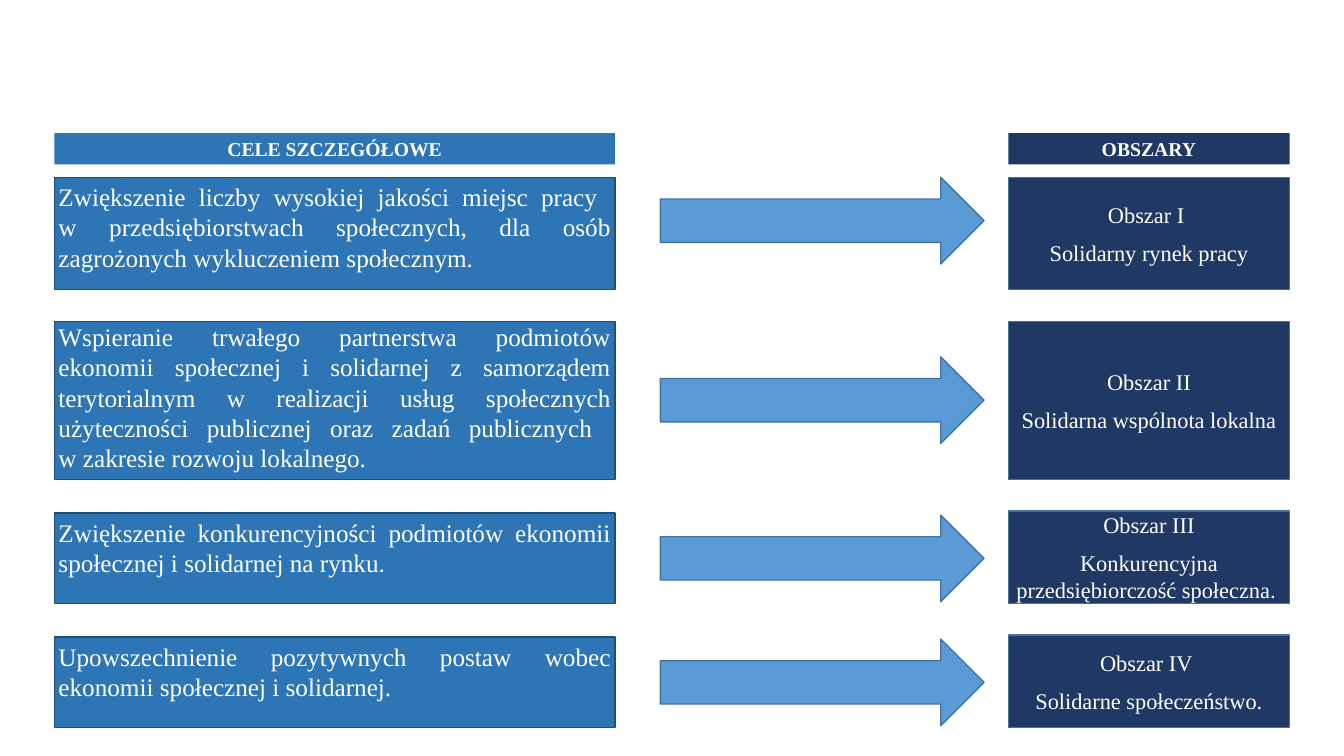
from pptx import Presentation
from pptx.dml.color import RGBColor as Rgb
from pptx.enum.shapes import MSO_SHAPE as Preset
from pptx.enum.text import MSO_ANCHOR as Anchor, PP_ALIGN as Align
from pptx.util import Inches, Pt

THEME = {
    "font": "Times New Roman",
    "white": Rgb.from_string("FFFFFF"),
    "goal": Rgb.from_string("2E75B6"),
    "goal_edge": Rgb.from_string("1F4E79"),
    "area": Rgb.from_string("203864"),
    "arrow": Rgb.from_string("5B9BD5"),
    "edge": Rgb.from_string("43739E"),
    "header_size": Pt(14),
    "goal_size": Pt(18),
    "area_size": Pt(16),
}
GOAL_COLUMN, ARROW_COLUMN, AREA_COLUMN = (0.54, 5.56), (6.55, 3.21), (10, 2.79)
HEADER_ROW = (1.32, 0.31)
ARROW_HEIGHT = 0.86
INSET = 0.04

ROWS = [
    {
        "goal": "Zwiększenie liczby wysokiej jakości miejsc pracy \nw przedsiębiorstwach społecznych, dla osób zagrożonych wykluczeniem społecznym.",
        "areas": ["Obszar I ", "Solidarny rynek pracy"],
        "goal_row": (1.76, 1.11), "area_row": (1.76, 1.11), "arrow_top": 1.76,
        "goal_inset": INSET,
    },
    {
        "goal": "Wspieranie trwałego partnerstwa podmiotów ekonomii społecznej i solidarnej z samorządem terytorialnym w realizacji usług społecznych użyteczności publicznej oraz zadań publicznych \nw zakresie rozwoju lokalnego.",
        "areas": ["Obszar II", "Solidarna wspólnota lokalna"],
        "goal_row": (3.19, 1.57), "area_row": (3.19, 1.57), "arrow_top": 3.54,
        "goal_inset": 0,
    },
    {
        "goal": "Zwiększenie konkurencyjności podmiotów ekonomii społecznej i solidarnej na rynku.",
        "areas": ["Obszar III", "Konkurencyjna przedsiębiorczość społeczna. "],
        "goal_row": (5.09, 0.9), "area_row": (5.07, 0.92), "arrow_top": 5.11,
        "goal_inset": INSET,
    },
    {
        "goal": "Upowszechnienie pozytywnych postaw wobec ekonomii społecznej i solidarnej.",
        "areas": ["Obszar IV ", "Solidarne społeczeństwo."],
        "goal_row": (6.32, 0.9), "area_row": (6.3, 0.92), "arrow_top": 6.34,
        "goal_inset": INSET,
    },
]


def add_block(preset, column, row, fill, edge=None):
    (left, width), (top, height) = column, row
    block = slide.shapes.add_shape(preset, *map(Inches, (left, top, width, height)))
    block.shadow.inherit = False
    block.fill.solid()
    block.fill.fore_color.rgb = fill
    if edge is None:
        block.line.fill.background()
    else:
        block.line.color.rgb = edge
        block.line.width = Pt(1)
    return block


def write(block, lines, size, align=Align.CENTER, anchor=Anchor.MIDDLE, bold=False, top_inset=INSET):
    frame = block.text_frame
    frame_format = {
        "word_wrap": True, "vertical_anchor": anchor, "margin_top": Inches(top_inset),
        "margin_left": Inches(INSET), "margin_right": Inches(INSET), "margin_bottom": Inches(INSET),
    }
    for key, value in frame_format.items():
        setattr(frame, key, value)
    for index, line in enumerate(lines):
        paragraph = frame.add_paragraph() if index else frame.paragraphs[0]
        paragraph.text = line
        for key, value in {"alignment": align, "space_after": Pt(8)}.items():
            setattr(paragraph, key, value)
        for run in paragraph.runs:
            for key, value in {"name": THEME["font"], "size": size, "bold": bold}.items():
                setattr(run.font, key, value)
            run.font.color.rgb = THEME["white"]


deck = Presentation()
deck.slide_width, deck.slide_height = Inches(13.33), Inches(7.5)
slide = deck.slides.add_slide(deck.slide_layouts[6])

for heading, column, fill in [
    ("CELE SZCZEGÓŁOWE", GOAL_COLUMN, THEME["goal"]),
    ("OBSZARY", AREA_COLUMN, THEME["area"]),
]:
    header = add_block(Preset.RECTANGLE, column, HEADER_ROW, fill)
    write(header, [heading], THEME["header_size"], bold=True)

for row in ROWS:
    goal = add_block(Preset.RECTANGLE, GOAL_COLUMN, row["goal_row"], THEME["goal"], THEME["goal_edge"])
    write(goal, [row["goal"]], THEME["goal_size"], Align.JUSTIFY, Anchor.TOP, top_inset=row["goal_inset"])
    area = add_block(Preset.RECTANGLE, AREA_COLUMN, row["area_row"], THEME["area"], THEME["edge"])
    write(area, row["areas"], THEME["area_size"])
    add_block(Preset.RIGHT_ARROW, ARROW_COLUMN, (row["arrow_top"], ARROW_HEIGHT), THEME["arrow"], THEME["edge"])

deck.save("out.pptx")
